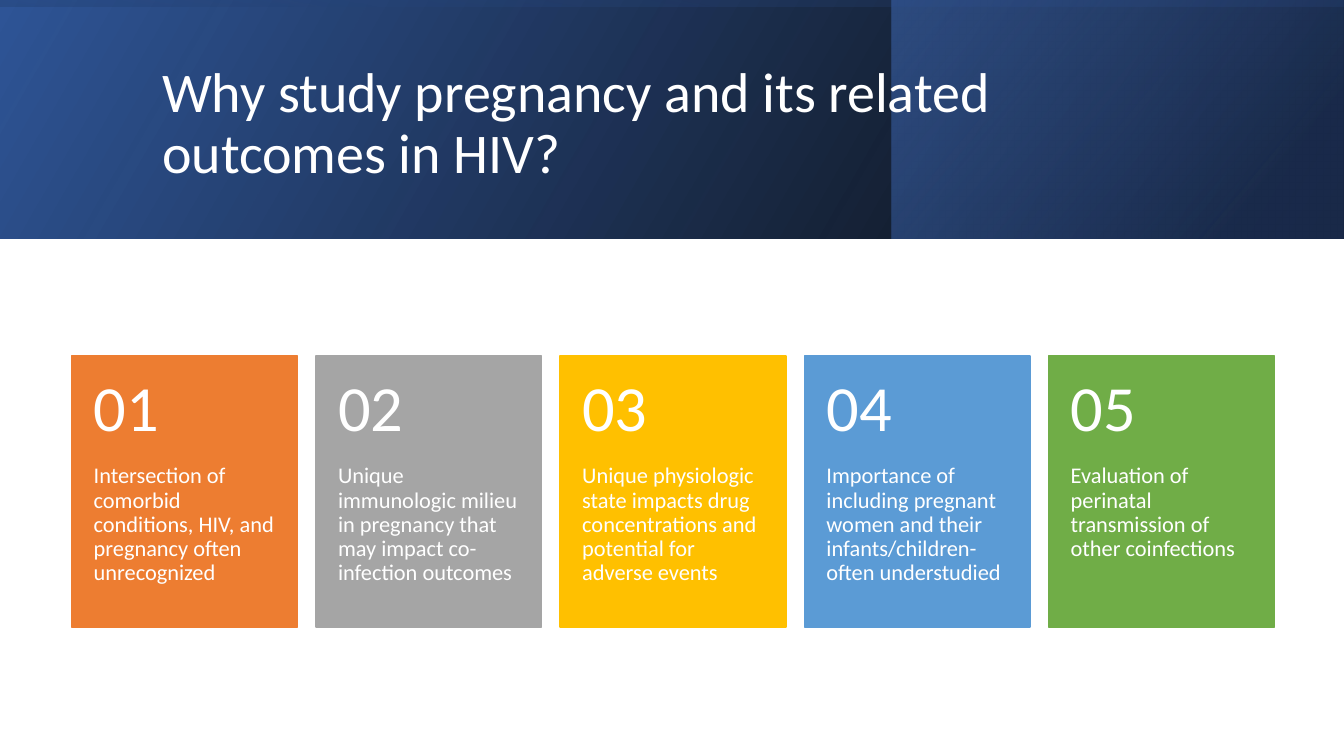
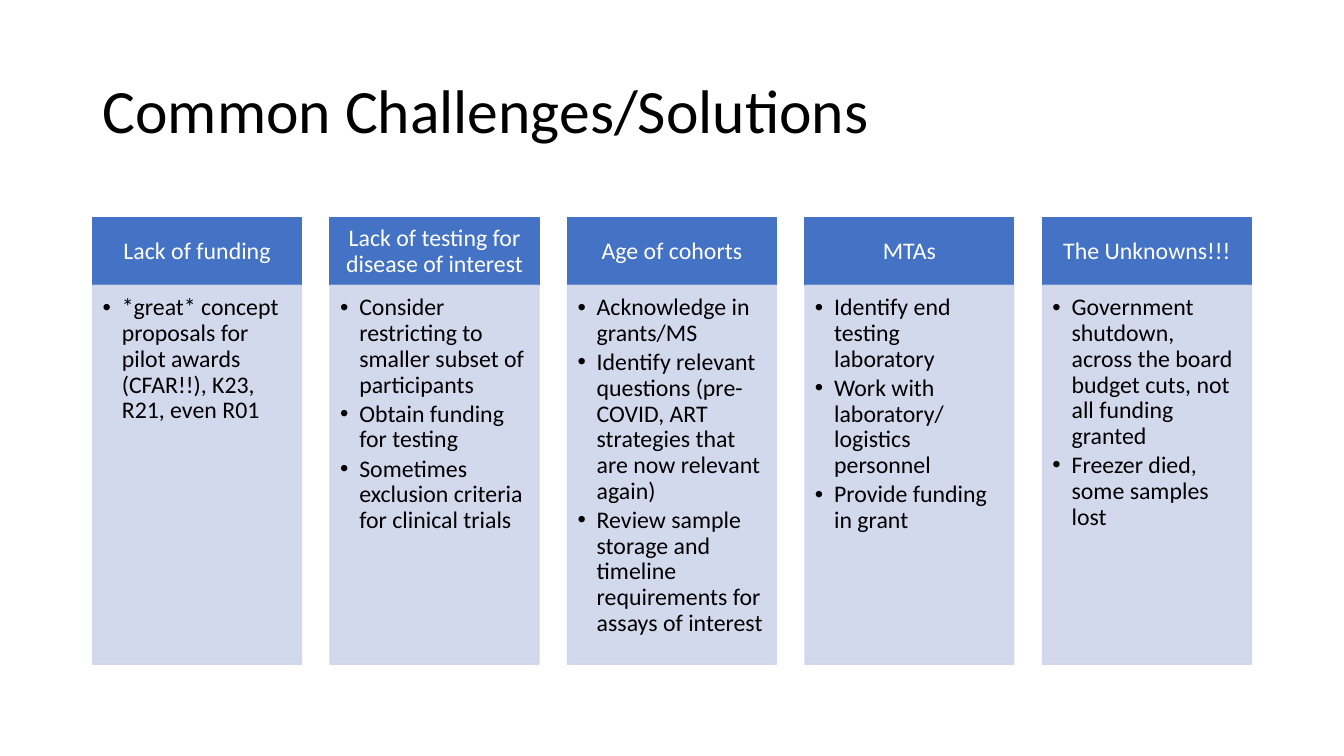
from lxml import etree
from pptx import Presentation, util as u
from pptx.dml import color as dml
from pptx.enum import text as t, shapes as s
from pptx.oxml import ns

COLORS = {
    "white": "FFFFFF", "black": "000000", "navy": "203864", "deep": "2F5597",
    "blue": "4472C4", "pale": "CFD5EA", "orange": "ED7D31", "gray": "A5A5A5",
    "gold": "FFC000", "sky": "5B9BD5", "green": "70AD47",
}

REASONS = [
    ("orange", "Intersection of comorbid conditions, HIV, and pregnancy often unrecognized"),
    ("gray", "Unique immunologic milieu in pregnancy that may impact co-infection outcomes"),
    ("gold", "Unique physiologic state impacts drug concentrations and potential for adverse events"),
    ("sky", "Importance of including pregnant women and their infants/children- often understudied"),
    ("green", "Evaluation of perinatal transmission of other coinfections"),
]

CHALLENGES = [
    ("Lack of funding",
     ["*great* concept proposals for pilot awards (CFAR!!), K23, R21, even R01"]),
    ("Lack of testing for disease of interest",
     ["Consider restricting to smaller subset of participants",
      "Obtain funding for testing",
      "Sometimes exclusion criteria for clinical trials"]),
    ("Age of cohorts",
     ["Acknowledge in grants/MS",
      "Identify relevant questions (pre-COVID, ART strategies that are now relevant again)",
      "Review sample storage and timeline requirements for assays of interest"]),
    ("MTAs",
     ["Identify end testing laboratory",
      "Work with laboratory/ logistics personnel",
      "Provide funding in grant"]),
    ("The Unknowns!!!",
     ["Government shutdown, across the board budget cuts, not all funding granted",
      "Freezer died, some samples lost"]),
]


def rgb(name):
    return dml.RGBColor.from_string(COLORS[name])


def apply(target, values):
    for name, value in values.items():
        setattr(target, name, value)


def spread(first, last, count):
    return [first + i * (last - first) / (count - 1) for i in range(count)]


class Deck:
    font = "Calibri"

    def __init__(self):
        self.prs = Presentation()
        apply(self.prs, {"slide_width": u.Inches(13.33), "slide_height": u.Inches(7.5)})
        self.slide = None

    def new_slide(self):
        self.slide = self.prs.slides.add_slide(self.prs.slide_layouts[6])

    def box(self, at):
        return self.slide.shapes.add_textbox(*map(u.Inches, at))

    def rect(self, at):
        shape = self.slide.shapes.add_shape(s.MSO_SHAPE.RECTANGLE, *map(u.Inches, at))
        shape.shadow.inherit = False
        return shape

    def set_alpha(self, shape, opacities):
        for color, opacity in zip(shape._element.spPr.iter(ns.qn("a:srgbClr")), opacities):
            etree.SubElement(color, ns.qn("a:alpha"), val=str(opacity * 1000))

    def panel(self, at, color, opacity=100):
        shape = self.rect(at)
        shape.fill.solid()
        shape.fill.fore_color.rgb = rgb(color)
        shape.line.color.rgb = rgb(color)
        shape.line.width = u.Pt(1)
        if opacity < 100:
            self.set_alpha(shape, [opacity, opacity])
        return shape

    def gradient_band(self, at, stops, angle, rotation=0):
        band = self.rect(at)
        band.rotation = rotation
        band._element.spPr.xfrm.set("flipH", "1")
        band.line.fill.background()
        band.fill.gradient()
        band.fill.gradient_angle = angle
        for stop, (position, color, _) in zip(band.fill.gradient_stops, stops):
            stop.position = position
            stop.color.rgb = rgb(color)
        self.set_alpha(band, [opacity for _, _, opacity in stops])

    def add_text(self, shape, lines, size, color, insets=(0.1, 0.05, 0.1, 0.05),
                 anchor=t.MSO_ANCHOR.MIDDLE, align=t.PP_ALIGN.LEFT, bullet=False):
        frame = shape.text_frame
        sides = ("margin_left", "margin_top", "margin_right", "margin_bottom")
        apply(frame, {"word_wrap": True, "vertical_anchor": anchor,
                      **dict(zip(sides, map(u.Inches, insets)))})
        for i, line in enumerate(lines):
            paragraph = frame.add_paragraph() if i else frame.paragraphs[0]
            if bullet:
                props = paragraph._p.get_or_add_pPr()
                props.set("marL", str(u.Inches(0.19)))
                props.set("indent", str(u.Inches(-0.19)))
                etree.SubElement(props, ns.qn("a:buFont"), typeface="Arial")
                etree.SubElement(props, ns.qn("a:buChar"), char="•")
                paragraph.space_after = u.Pt(2.5)
            apply(paragraph, {"alignment": align, "line_spacing": 0.9})
            run = paragraph.add_run()
            run.text = line
            apply(run.font, {"name": self.font, "size": u.Pt(size)})
            run.font.color.rgb = rgb(color)

    def title(self, at, wording, size, color):
        self.add_text(self.box(at), [wording], size, color)

    def card(self, left, number, color, reason):
        top, width, head, height = 3.53, 2.24, 1.08, 2.69
        self.panel((left, top, width, height), color)
        self.add_text(self.box((left, top + head, width, height - head)), [reason], 16, "white",
                      (0.22, 0, 0.22, 0.36), t.MSO_ANCHOR.TOP)
        self.add_text(self.box((left, top, width, head)), [f"{number:02}"], 46, "white",
                      (0.22, 0.18, 0.22, 0.18))

    def column(self, left, challenge, solutions):
        top, width, head = 2.16, 2.07, 0.67
        self.add_text(self.panel((left, top, width, head), "blue"), [challenge], 17, "white",
                      (0.13, 0.08, 0.13, 0.08), align=t.PP_ALIGN.CENTER)
        self.add_text(self.panel((left, top + head, width, 3.76), "pale", 90), solutions, 17,
                      "black", (0.1, 0.1, 0.13, 0.15), t.MSO_ANCHOR.TOP, bullet=True)


def main():
    deck = Deck()

    deck.new_slide()
    deck.gradient_band((0, 0, 13.33, 2.37), [(0, "black", 96), (1, "deep", 100)], 30)
    deck.gradient_band((8.84, 0, 4.48, 2.37), [(0.19, "navy", 68), (1, "blue", 48)], 40)
    deck.gradient_band((5.48, -5.48, 2.37, 13.33),
                       [(0.23, "deep", 16), (0.99, "black", 45)], 10, rotation=270)
    deck.title((1.51, 0.38, 10.63, 1.72),
               "Why study pregnancy and its related outcomes in HIV?", 40, "white")
    lefts = spread(0.71, 10.4, len(REASONS))
    for number, (left, (color, reason)) in enumerate(zip(lefts, REASONS), 1):
        deck.card(left, number, color, reason)

    deck.new_slide()
    deck.title((0.92, 0.4, 11.5, 1.45), "Common Challenges/Solutions", 44, "black")
    lefts = spread(0.92, 10.34, len(CHALLENGES))
    for left, (challenge, solutions) in zip(lefts, CHALLENGES):
        deck.column(left, challenge, solutions)

    deck.prs.save("out.pptx")


if __name__ == "__main__":
    main()
